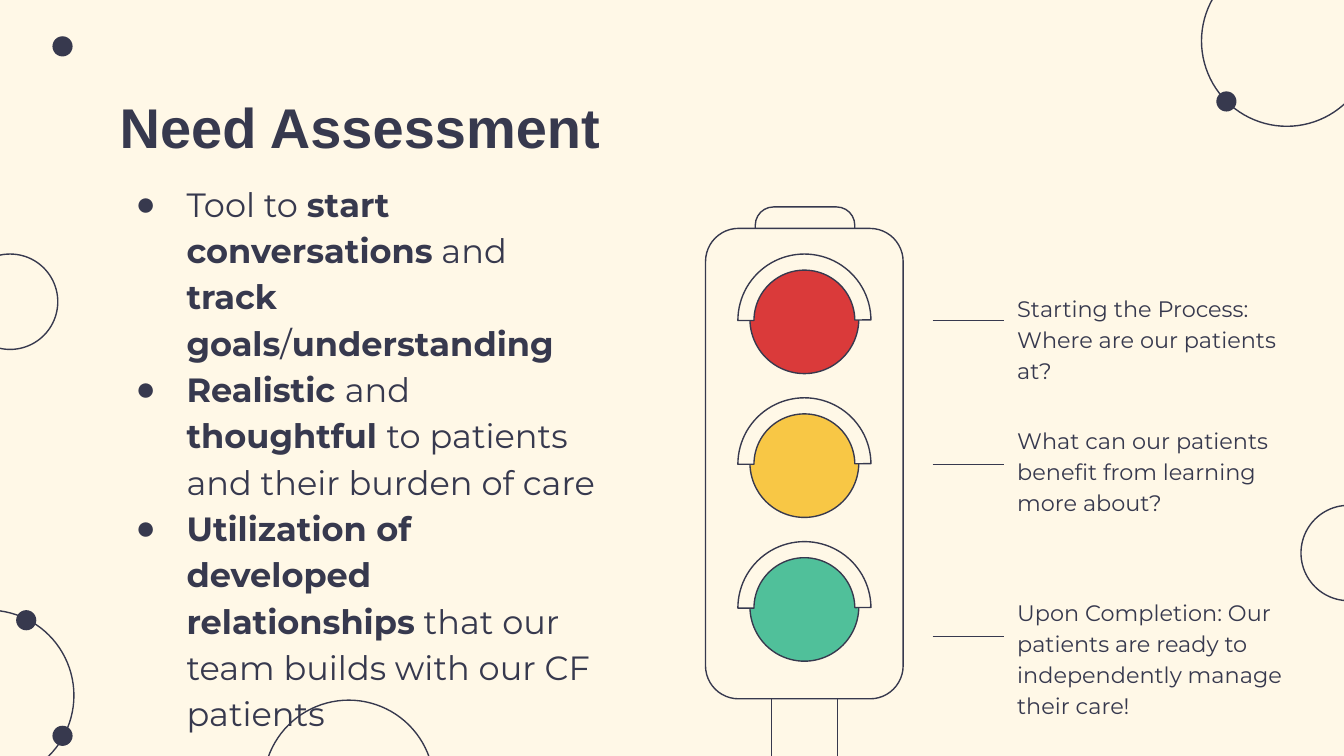
from lxml import etree
from pptx import Presentation
from pptx.dml.color import RGBColor
from pptx.enum import shapes, text
from pptx.oxml.ns import qn
from pptx.util import Inches, Pt

CREAM = RGBColor(0xFF, 0xF8, 0xE7)
NAVY = RGBColor(0x37, 0x39, 0x4E)
RED = RGBColor(0xDA, 0x3A, 0x3A)
YELLOW = RGBColor(0xF8, 0xC7, 0x45)
GREEN = RGBColor(0x50, 0xC0, 0x9A)

SHAPE = shapes.MSO_SHAPE
LINE_WIDTH = Pt(0.75)
LIGHT_SIZE, HOOD_SIZE = 0.81, 0.99
LIGHT_LEFT, FIRST_LIGHT_TOP, LIGHT_STEP = 5.58, 1.97, 1.07
HOOD_LEFT, HOOD_RISE = 5.49, 0.08
HOOD_ADJUSTMENTS = (108, 215.645, 0.121)
CALLOUT_LEFT, LEADER_LEFT = 7.47, 6.94

# left, top, diameter
RINGS = [(8.94, -0.33, 1.27), (-0.72, 4.54, 1.27), (-0.28, 1.89, 0.71),
         (9.68, 3.76, 0.71), (1.96, 5.21, 1.27)]
DOTS = [(9.05, 0.68), (0.12, 4.54), (0.39, 5.4), (0.39, 0.27)]
DOT_SIZE = 0.15

# Each paragraph is a list of (words, bold) runs
POINTS = [
    [("Tool to ", False), ("start conversations", True), (" and ", False),
     ("track goals", True), ("/", False), ("understanding", True)],
    [("Realistic ", True), ("and ", False), ("thoughtful ", True),
     ("to patients and their burden of care", False)],
    [("Utilization of developed relationships", True),
     (" that our team builds with our CF patients", False)],
]

# top, width, height, lines
CALLOUTS = [
    (2.07, 2.41, 0.63, ["Starting the Process:", "Where are our patients at?"]),
    (3.05, 2.38, 0.81, ["What can our patients benefit from learning more about?"]),
    (4.33, 2.38, 0.81, ["Upon Completion: Our patients are ready to "
                        "independently manage their care!"]),
]


def add_outlined_shape(slide, kind, left, top, width, height, fill=None, adjustments=()):
    shape = slide.shapes.add_shape(
        kind, Inches(left), Inches(top), Inches(width), Inches(height))
    shape.shadow.inherit = False
    for index, value in enumerate(adjustments):
        shape.adjustments[index] = value
    if fill is None:
        shape.fill.background()
    else:
        shape.fill.solid()
        shape.fill.fore_color.rgb = fill
    shape.line.color.rgb = NAVY
    shape.line.width = LINE_WIDTH
    return shape


def add_dot(slide, left, top):
    dot = add_outlined_shape(slide, SHAPE.OVAL, left, top, DOT_SIZE, DOT_SIZE, NAVY)
    dot.line.fill.background()


def add_bullet(paragraph):
    properties = paragraph._p.get_or_add_pPr()
    properties.set("marL", str(Inches(0.5)))
    properties.set("indent", str(Inches(-0.38)))
    color = etree.SubElement(properties, qn("a:buClr"))
    etree.SubElement(color, qn("a:srgbClr"), val=str(NAVY))
    etree.SubElement(properties, qn("a:buFont"), typeface="Arial")
    etree.SubElement(properties, qn("a:buChar"), char="●")


def write_text(shape, paragraphs, size, font="Montserrat", spacing=1.15, bullets=False):
    """Fill the shape with paragraphs, each a list of (words, bold) runs."""
    frame = shape.text_frame
    frame.word_wrap = True
    frame.auto_size = text.MSO_AUTO_SIZE.NONE
    frame.vertical_anchor = text.MSO_ANCHOR.TOP
    frame.margin_left = frame.margin_right = Inches(0.1)
    frame.margin_top = frame.margin_bottom = Inches(0.1)
    for index, runs in enumerate(paragraphs):
        paragraph = frame.add_paragraph() if index else frame.paragraphs[0]
        if bullets:
            add_bullet(paragraph)
        paragraph.alignment = text.PP_ALIGN.LEFT
        paragraph.line_spacing = spacing
        paragraph.space_before = Pt(0)
        for words, bold in runs:
            run = paragraph.add_run()
            run.text = words
            run.font.name = font
            run.font.size = Pt(size)
            run.font.bold = bold
            run.font.color.rgb = NAVY


def add_text_box(slide, left, top, width, height, paragraphs, **text_format):
    box = slide.shapes.add_textbox(
        Inches(left), Inches(top), Inches(width), Inches(height))
    write_text(box, paragraphs, **text_format)
    return box


def add_title(slide):
    title = slide.shapes.title
    title.left, title.top = Inches(0.79), Inches(0.59)
    title.width, title.height = Inches(8.43), Inches(0.63)
    write_text(title, [[("Need Assessment", True)]], size=30, font="Arial", spacing=1.0)


def add_traffic_light(slide):
    add_outlined_shape(slide, SHAPE.ROUND_2_SAME_RECTANGLE, 5.62, 1.54, 0.74, 0.27,
                       CREAM, (0.5, 0))
    add_outlined_shape(slide, SHAPE.RECTANGLE, 5.74, 5.11, 0.49, 0.75, CREAM)
    add_outlined_shape(slide, SHAPE.ROUNDED_RECTANGLE, 5.25, 1.7, 1.47, 3.5,
                       CREAM, (0.167,))
    for index, color in enumerate((RED, YELLOW, GREEN)):
        top = FIRST_LIGHT_TOP + index * LIGHT_STEP
        add_outlined_shape(slide, SHAPE.OVAL, LIGHT_LEFT, top,
                           LIGHT_SIZE, LIGHT_SIZE, color)
        add_outlined_shape(slide, SHAPE.BLOCK_ARC, HOOD_LEFT, top - HOOD_RISE,
                           HOOD_SIZE, HOOD_SIZE, CREAM, HOOD_ADJUSTMENTS)


def add_callout(slide, top, width, height, lines):
    """Add a caption with a leader line joined to the middle of its left side."""
    box = add_text_box(slide, CALLOUT_LEFT, top, width, height,
                       [[(line, False)] for line in lines], size=12)
    middle = Inches(top + height / 2)
    leader = slide.shapes.add_connector(
        shapes.MSO_CONNECTOR.STRAIGHT, Inches(LEADER_LEFT), middle,
        Inches(CALLOUT_LEFT), middle)
    leader.end_connect(box, 1)
    leader.line.color.rgb = NAVY
    leader.line.width = LINE_WIDTH
    etree.SubElement(leader._element.spPr, qn("a:effectLst"))


def main():
    presentation = Presentation()
    presentation.slide_width = Inches(10)
    presentation.slide_height = Inches(10 * 9 / 16)
    slide = presentation.slides.add_slide(presentation.slide_layouts[5])
    slide.background.fill.solid()
    slide.background.fill.fore_color.rgb = CREAM

    for left, top, diameter in RINGS:
        add_outlined_shape(slide, SHAPE.OVAL, left, top, diameter, diameter)
    for left, top in DOTS:
        add_dot(slide, left, top)
    add_title(slide)
    add_text_box(slide, 0.79, 1.22, 3.8, 3.89, POINTS, size=18, bullets=True)
    add_traffic_light(slide)
    for callout in CALLOUTS:
        add_callout(slide, *callout)
    presentation.save("out.pptx")


if __name__ == "__main__":
    main()
